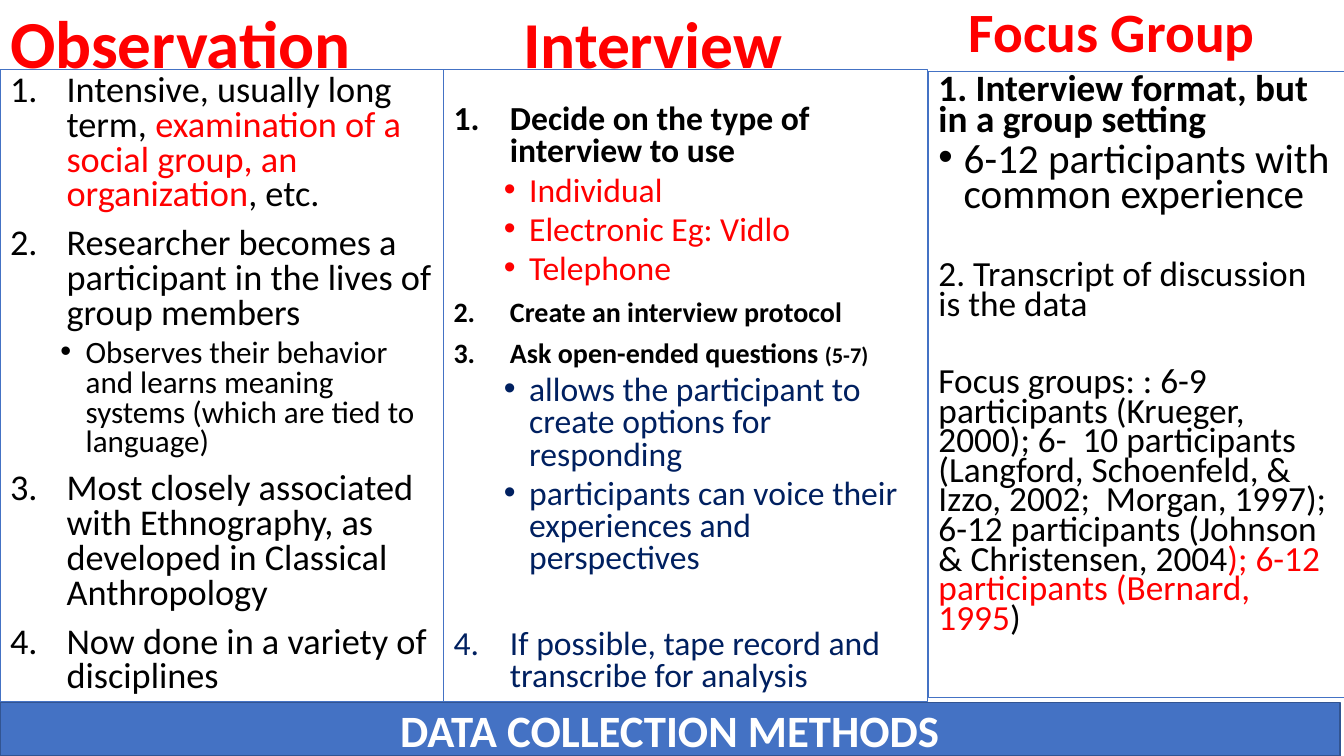
from lxml import etree
from pptx import Presentation
from pptx.dml.color import RGBColor
from pptx.enum.shapes import MSO_SHAPE
from pptx.enum.text import MSO_ANCHOR, MSO_AUTO_SIZE, PP_ALIGN
from pptx.oxml.ns import qn
from pptx.util import Inches, Pt

RECT = MSO_SHAPE.RECTANGLE
TOP, MIDDLE = MSO_ANCHOR.TOP, MSO_ANCHOR.MIDDLE
LEFT, CENTER = PP_ALIGN.LEFT, PP_ALIGN.CENTER
NO_FIT = MSO_AUTO_SIZE.NONE
RED, BLACK, NAVY, WHITE, BLUE = "FF0000", "000000", "002060", "FFFFFF", "4472C4"

# Kind of paragraph: level, left margin, hanging indent, space before, bullet
KINDS = {
    "number": (0, 0.56, -0.56, 10, ("a:buAutoNum", "type", "arabicPeriod")),
    "dot": (1, 0.75, -0.25, 5, ("a:buChar", "char", "•")),
    "lead": (0, 0.25, -0.25, 5, ("a:buChar", "char", "•")),
    "plain": (0, 0, 0, 10, None),
}


def color(code):
    return RGBColor.from_string(code)


def write(shape, paras, lines, anchor=TOP, align=LEFT):
    """Fill a shape with (kind, extra space before, runs) paragraphs."""
    frame = shape.text_frame
    frame.word_wrap = True
    frame.auto_size = NO_FIT
    frame.vertical_anchor = anchor
    for i, (kind, extra, runs) in enumerate(paras):
        level, margin, indent, before, bullet = KINDS[kind]
        para = frame.paragraphs[0] if i == 0 else frame.add_paragraph()
        para.level = level
        para.alignment = align
        para.line_spacing = lines
        para.space_before = Pt(before + extra if i else 0)
        props = para._p.get_or_add_pPr()
        props.set("marL", str(Inches(margin)))
        props.set("indent", str(Inches(indent)))
        if bullet:
            tag, key, value = bullet
            if tag == "a:buChar":
                etree.SubElement(props, qn("a:buFont")).set("typeface", "Arial")
            etree.SubElement(props, qn(tag)).set(key, value)
        else:
            etree.SubElement(props, qn("a:buNone"))
        for text, size, code, bold in runs:
            run = para.add_run()
            run.text = text
            run.font.name = "Calibri"
            run.font.size = Pt(size)
            run.font.bold = bold
            run.font.color.rgb = color(code)


deck = Presentation()
deck.slide_width, deck.slide_height = Inches(13.33), Inches(7.5)
slide = deck.slides.add_slide(deck.slide_layouts[1])
shapes = slide.shapes
title, body = slide.placeholders[0], slide.placeholders[1]

watch = [
    ("number", 0, [
        ("Intensive, usually long term, ", 25.9, BLACK, False),
        ("examination of a social group, an organization", 25.9, RED, False),
        (", etc.", 25.9, BLACK, False)]),
    ("number", 0, [("Researcher becomes a participant in the lives of group members",
                    25.9, BLACK, False)]),
    ("dot", 0, [("Observes their behavior and learns meaning systems "
                 "(which are tied to language)", 22.2, BLACK, False)]),
    ("number", 0, [("Most closely associated with Ethnography, as developed in "
                    "Classical Anthropology", 25.9, BLACK, False)]),
    ("number", 0, [("Now done in a variety of disciplines", 25.9, BLACK, False)]),
]
talk = [
    ("number", 0, [("Decide on the type of interview to use", 24, BLACK, True)]),
    ("dot", 0, [("Individual", 24, RED, False)]),
    ("dot", 0, [("Electronic Eg: Vidlo", 24, RED, False)]),
    ("dot", 0, [("Telephone", 24, RED, False)]),
    ("number", 0, [("Create an interview protocol", 20, BLACK, True)]),
    ("number", 0, [("Ask open-ended questions ", 20, BLACK, True),
                   ("(5-7)", 16, BLACK, True)]),
    ("dot", 0, [("allows the participant to create options for responding",
                 24, NAVY, False)]),
    ("dot", 0, [("participants can voice their experiences and perspectives",
                 24, NAVY, False)]),
    ("number", 28, [("If possible, tape record and transcribe for analysis",
                     24, NAVY, False)]),
]
group = [
    ("plain", 0, [("1. Interview format, but in a group setting", 26.6, BLACK, True)]),
    ("lead", 0, [("6-12 participants with common experience", 29.4, BLACK, False)]),
    ("plain", 24, [("2. Transcript of discussion is the data", 25.2, BLACK, False)]),
    ("plain", 24, [
        ("Focus groups: : 6-9 participants (Krueger, 2000); 6-  10 participants "
         "(Langford, Schoenfeld, & Izzo, 2002;  Morgan, 1997); 6-12 participants "
         "(Johnson & Christensen, 2004", 25.2, BLACK, False),
        ("); 6-12 participants (Bernard, 1995", 25.2, RED, False),
        (")", 25.2, BLACK, False)]),
]

# Headings and columns, from back to front: shape, box, fill, line
head = shapes.add_shape(RECT, 0, 0, 0, 0)
middle = shapes.add_shape(RECT, 0, 0, 0, 0)
right = shapes.add_shape(RECT, 0, 0, 0, 0)
label = shapes.add_textbox(0, 0, 0, 0)
banner = shapes.add_shape(RECT, 0, 0, 0, 0)
for shape, box, fill, line, width in [
    (title, (0, 0, 3.7, 0.93), None, None, 0),
    (body, (0, 0.69, 4.4, 6.27), None, BLUE, 0.75),
    (head, (5.09, 0, 4.54, 0.93), WHITE, None, 0),
    (middle, (4.4, 0.69, 4.8, 6.27), WHITE, BLUE, 0.75),
    (right, (9.21, 0.71, 4.13, 6.21), None, BLUE, 0.75),
    (label, (9.51, 0.01, 3.78, 0.7), None, None, 0),
    (banner, (0, 6.97, 13.29, 0.53), BLUE, "325491", 1),
]:
    shape.left, shape.top, shape.width, shape.height = map(Inches, box)
    if fill:
        shape.fill.solid()
        shape.fill.fore_color.rgb = color(fill)
    else:
        shape.fill.background()
    if line:
        shape.line.color.rgb = color(line)
        shape.line.width = Pt(width)
    else:
        shape.line.fill.background()
    shape.shadow.inherit = False

for shape, text, size, lines in [
    (title, "Observation", 48, 0.9),
    (head, "Interview", 46.8, 0.9),
    (label, "Focus Group", 39.6, 0.8),
]:
    write(shape, [("plain", 0, [(text, size, RED, True)])], lines, MIDDLE)

for shape, paras, lines in [(body, watch, 0.8), (middle, talk, 0.8), (right, group, 0.7)]:
    write(shape, paras, lines)
middle.text_frame.margin_top = Inches(0.35)

write(banner, [("plain", 0, [("DATA COLLECTION METHODS", 32, WHITE, True)])],
      1.0, MIDDLE, CENTER)

deck.save("out.pptx")
